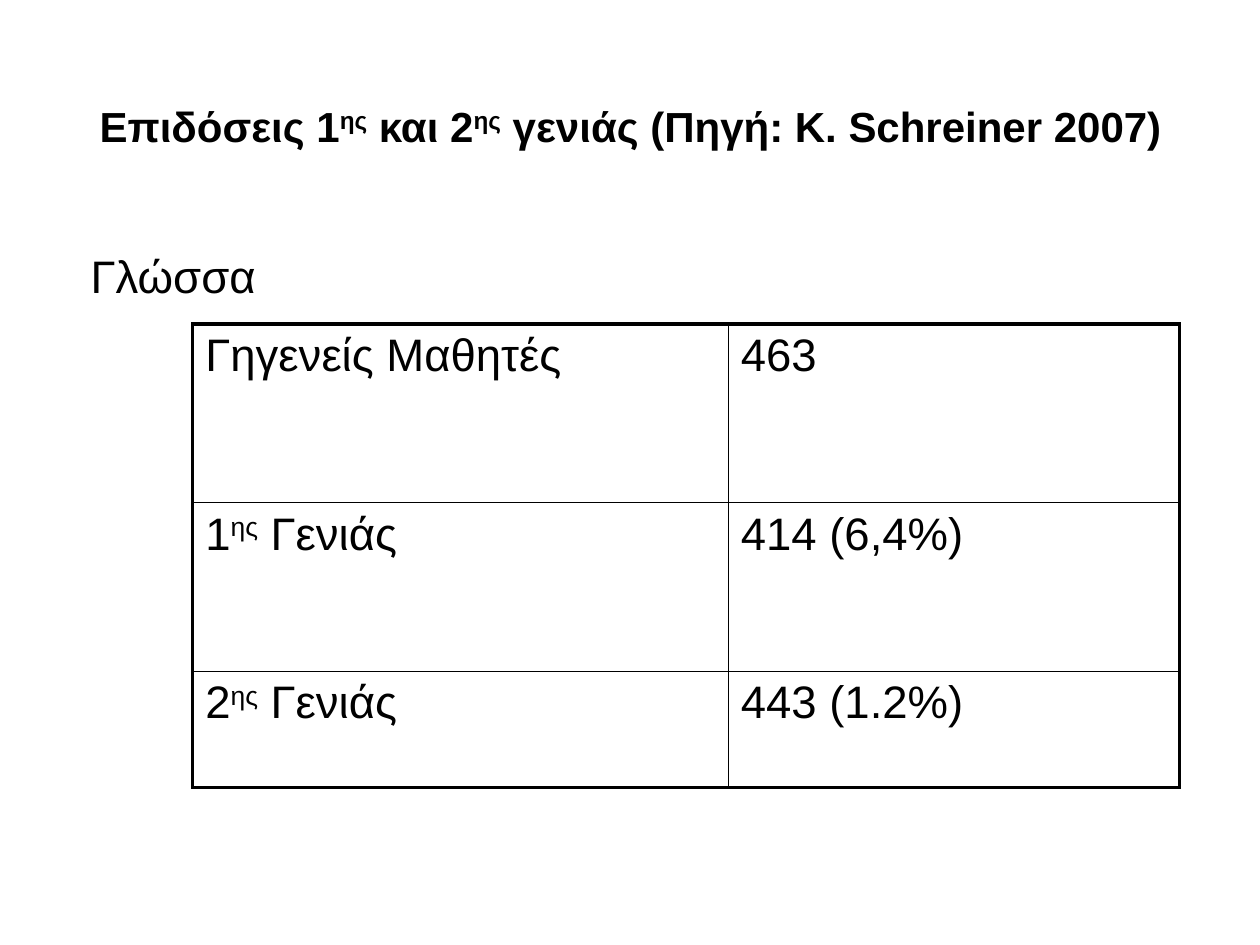
from lxml import etree
from pptx import Presentation
from pptx.dml.color import RGBColor
from pptx.enum.text import MSO_ANCHOR, PP_ALIGN
from pptx.oxml.ns import qn
from pptx.util import Inches, Pt

MID = MSO_ANCHOR.MIDDLE
TOP = MSO_ANCHOR.TOP
CENTER = PP_ALIGN.CENTER
LEFT = PP_ALIGN.LEFT


def color(hex_code):
    return RGBColor.from_string(hex_code)


class Page:
    font = "Arial"
    ink = "000000"
    paper = "FFFFFF"
    thick = 2.25
    thin = 1

    def __init__(self, deck):
        self.slide = deck.slides.add_slide(deck.slide_layouts[5])
        fill = self.slide.background.fill
        fill.solid()
        fill.fore_color.rgb = color(self.paper)

    def add_runs(self, para, runs, size, bold=False, align=LEFT):
        para.alignment = align
        for text, high in runs:
            run = para.add_run()
            run.text = text
            font = run.font
            font.name = self.font
            font.size = Pt(size)
            font.bold = bold
            font.color.rgb = color(self.ink)
            if high:
                run._r.get_or_add_rPr().set("baseline", "30000")

    def title(self, box, runs, size):
        shape = self.slide.shapes.title
        shape.left, shape.top, shape.width, shape.height = map(Inches, box)
        frame = shape.text_frame
        frame.word_wrap = True
        frame.vertical_anchor = MID
        self.add_runs(frame.paragraphs[0], runs, size, True, CENTER)

    def text(self, box, runs, size):
        shape = self.slide.shapes.add_textbox(*map(Inches, box))
        frame = shape.text_frame
        frame.word_wrap = True
        frame.vertical_anchor = TOP
        para = frame.paragraphs[0]
        para.space_before = Pt(2.4)
        self.add_runs(para, runs, size)

    def edge(self, cell, side, width):
        props = cell._tc.get_or_add_tcPr()
        line = etree.SubElement(props, qn(f"a:ln{side}"), w=str(Pt(width)))
        fill = etree.SubElement(line, qn("a:solidFill"))
        etree.SubElement(fill, qn("a:srgbClr"), val=self.ink)

    def table(self, left, top, cols, rows, data, size):
        box = (left, top, sum(cols), sum(rows))
        frame = self.slide.shapes.add_table(
            len(rows), len(cols), *map(Inches, box))
        grid = frame.table
        grid.first_row = False
        grid.horz_banding = False
        for col, width in zip(grid.columns, cols):
            col.width = Inches(width)
        for row, height in zip(grid.rows, rows):
            row.height = Inches(height)
        for y, line in enumerate(data):
            for x, runs in enumerate(line):
                cell = grid.cell(y, x)
                outer = {"L": x == 0, "R": x == len(cols) - 1,
                         "T": y == 0, "B": y == len(rows) - 1}
                for side, out in outer.items():
                    self.edge(cell, side, self.thick if out else self.thin)
                cell.fill.background()
                self.add_runs(cell.text_frame.paragraphs[0], runs, size)


def main():
    deck = Presentation()
    deck.slide_width = Inches(10)
    deck.slide_height = Inches(7.5)
    page = Page(deck)
    suffix = ("ης", True)
    page.title((0.63, 0.33, 8.75, 1.33), [
        ("Επιδόσεις 1", False), suffix, (" και 2", False), suffix,
        (" γενιάς (Πηγή: K. Schreiner 2007)", False)], 24)
    page.text((0.62, 1.92, 4.29, 4.67), [("Γλώσσα", False)], 26)
    born = (" Γενιάς", False)
    page.table(1.53, 2.57, (4.25, 3.58), (1.42, 1.34, 0.92), [
        ([("Γηγενείς Μαθητές", False)], [("463", False)]),
        ([("1", False), suffix, born], [("414 (6,4%)", False)]),
        ([("2", False), suffix, born], [("443 (1.2%)", False)])], 26)
    deck.save("out.pptx")


if __name__ == "__main__":
    main()
